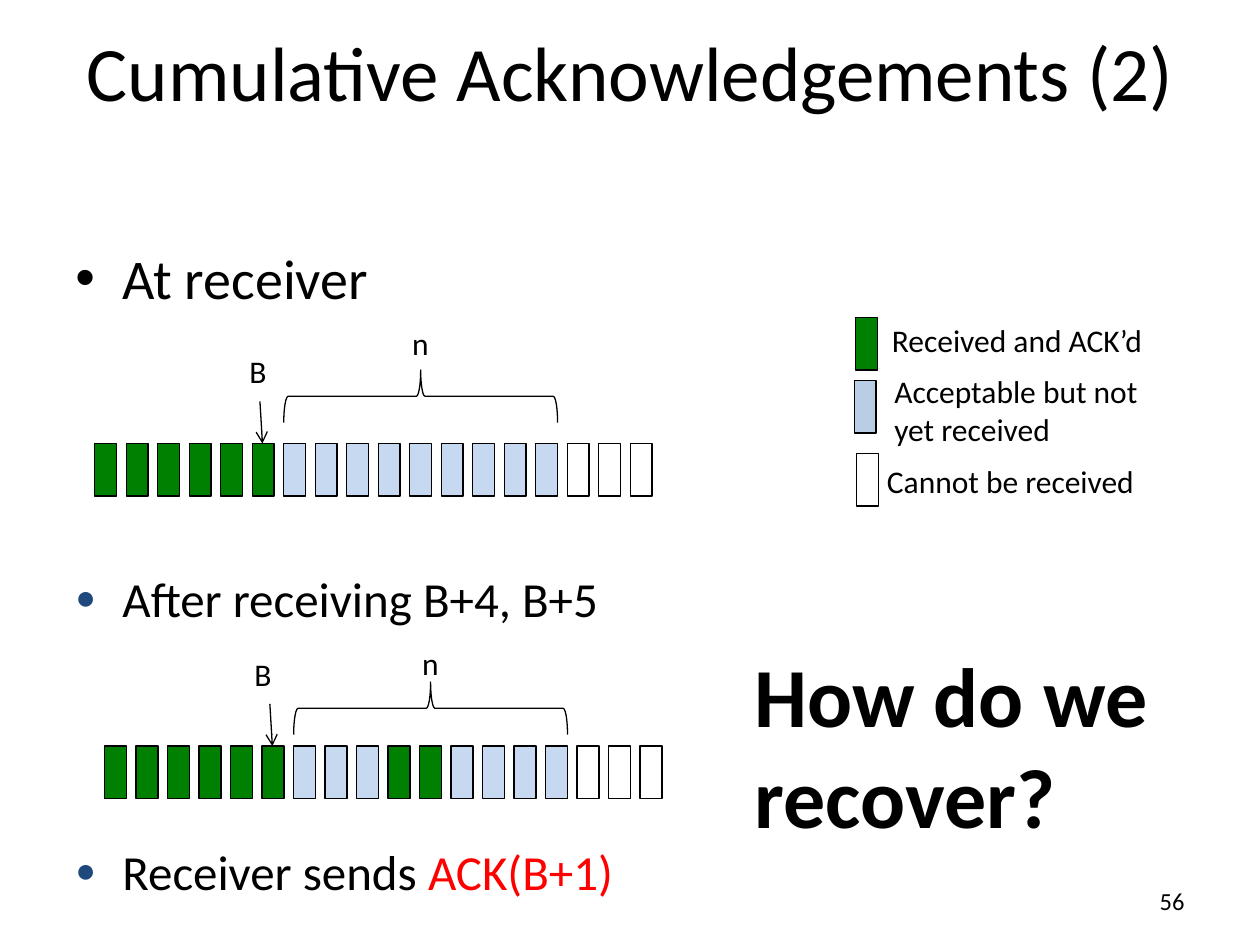
from dataclasses import dataclass

from lxml.etree import SubElement
from pptx import Presentation
from pptx.dml.color import RGBColor as Rgb
from pptx.enum.shapes import MSO_CONNECTOR as Connector, MSO_SHAPE as Shape
from pptx.enum.text import MSO_ANCHOR as Anchor, PP_ALIGN as Align
from pptx.oxml.ns import qn
from pptx.util import Cm, Pt


@dataclass(frozen=True)
class Theme:
    font: str = "Calibri"
    black: str = "000000"
    accent: str = "FF0000"
    bullet: str = "1F497D"
    received: str = "008000"
    acceptable: str = "C6D9F1"
    acceptable_key: str = "B9CDE5"
    blocked: str = "FFFFFF"
    title: int = 44
    heading: int = 32
    point: int = 28
    label: int = 18
    number: int = 14
    question: int = 48
    line: float = 0.75


@dataclass(frozen=True)
class Label:
    text: str
    left: float
    top: float
    width: float
    height: float = 1.02
    size: int = 18
    wrap: bool = False
    bold: bool = False
    align: Align = Align.LEFT
    anchor: Anchor = Anchor.TOP


@dataclass(frozen=True)
class Bullet:
    spans: tuple[tuple[str, str], ...]
    top: float
    size: int
    mark: str = "●"
    color: str = "1F497D"
    percent: int = 70


@dataclass(frozen=True)
class Strip:
    left: float
    top: float
    cells: str
    brace_top: float
    n_top: float
    b_left: float


@dataclass(frozen=True)
class Key:
    left: float
    top: float
    fill: str
    label: Label


THEME = Theme()
CELL_WIDTH, CELL_HEIGHT = Cm(0.44), Cm(1.06)
PITCH = Cm(2.54) // 4
WINDOW_START, WINDOW_SIZE = 6, 9
FILLS = {"R": THEME.received, "A": THEME.acceptable, "X": THEME.blocked}

LABELS = (
    Label("Cumulative Acknowledgements (2)", 1.07, -0.2, 23.29, 3.25, THEME.title,
          wrap=True, align=Align.CENTER, anchor=Anchor.MIDDLE),
    Label("56", 18.21, 17.65, 5.92, size=THEME.number, wrap=True,
          align=Align.RIGHT, anchor=Anchor.MIDDLE),
    Label("How do we recover?", 14.96, 12.85, 8.74, 4.37, THEME.question,
          wrap=True, bold=True),
)
BULLETS = (
    Bullet((("At receiver", THEME.black),), 4.78, THEME.heading, "•", THEME.black, 100),
    Bullet((("After receiving B+4, B+5", THEME.black),), 11.33, THEME.point),
    Bullet((("Receiver sends ", THEME.black), ("ACK(B+1)", THEME.accent)),
           16.84, THEME.point),
)
STRIPS = (
    Strip(1.91, 8.94, "RRRRRRAAAAAAAAAXXX", 7.46, 6.4, 4.78),
    Strip(2.11, 15.04, "RRRRRRAAARRAAAAXXX", 13.75, 12.85, 4.88),
)
KEYS = (
    Key(17.25, 6.4, THEME.received, Label("Received and ACK’d", 17.73, 6.35, 5.61)),
    Key(17.22, 7.67, THEME.acceptable_key,
        Label("Acceptable but not\nyet received", 17.78, 7.37, 5.46, 1.8)),
    Key(17.27, 9.14, THEME.blocked, Label("Cannot be received", 17.63, 9.19, 5.54)),
)


def format_span(span, size: int, color: str, bold: bool = False) -> None:
    span.font.name = THEME.font
    span.font.size = Pt(size)
    span.font.bold = bold
    span.font.color.rgb = Rgb.from_string(color)


def outline(shape) -> None:
    shape.line.color.rgb = Rgb.from_string(THEME.black)
    shape.line.width = Pt(THEME.line)


def draw_label(page, label: Label) -> None:
    box = page.shapes.add_textbox(
        Cm(label.left), Cm(label.top), Cm(label.width), Cm(label.height))
    frame = box.text_frame
    frame.text = label.text
    frame.word_wrap = label.wrap
    frame.vertical_anchor = label.anchor
    for para in frame.paragraphs:
        para.alignment = label.align
        for span in para.runs:
            format_span(span, label.size, THEME.black, label.bold)


def draw_bullet(page, bullet: Bullet) -> None:
    box = page.shapes.add_textbox(Cm(1.27), Cm(bullet.top), Cm(22.86), Cm(1.57))
    box.text_frame.word_wrap = True
    para = box.text_frame.paragraphs[0]
    for text, color in bullet.spans:
        span = para.add_run()
        span.text = text
        format_span(span, bullet.size, color)
    props = para._p.get_or_add_pPr()
    props.set("marL", str(Cm(0.95)))
    props.set("indent", str(Cm(-0.95)))
    before = SubElement(props, qn("a:spcBef"))
    SubElement(before, qn("a:spcPct"), val="20000")
    tint = SubElement(props, qn("a:buClr"))
    SubElement(tint, qn("a:srgbClr"), val=bullet.color)
    SubElement(props, qn("a:buSzPct"), val=str(bullet.percent * 1000))
    SubElement(props, qn("a:buFont"), typeface="Arial")
    SubElement(props, qn("a:buChar"), char=bullet.mark)


def draw_cell(page, left: int, top: int, fill: str) -> None:
    cell = page.shapes.add_shape(Shape.RECTANGLE, left, top, CELL_WIDTH, CELL_HEIGHT)
    cell.shadow.inherit = False
    cell.fill.solid()
    cell.fill.fore_color.rgb = Rgb.from_string(fill)
    outline(cell)


def draw_brace(page, left: int, top: int, width: int, height: int) -> None:
    brace = page.shapes.add_shape(
        Shape.LEFT_BRACE, left + (width - height) // 2, top - (width - height) // 2,
        height, width)
    brace.rotation = 90
    brace.shadow.inherit = False
    brace.fill.background()
    outline(brace)


def draw_arrow(page, start: tuple[int, int], end: tuple[int, int]) -> None:
    arrow = page.shapes.add_connector(Connector.STRAIGHT, *start, *end)
    outline(arrow)
    SubElement(arrow.line._get_or_add_ln(), qn("a:tailEnd"), type="arrow")
    SubElement(arrow._element.spPr, qn("a:effectLst"))


def draw_strip(page, strip: Strip) -> None:
    left, top = Cm(strip.left), Cm(strip.top)
    for index, state in enumerate(strip.cells):
        draw_cell(page, left + index * PITCH, top, FILLS[state])
    draw_brace(page, left + WINDOW_START * PITCH, Cm(strip.brace_top),
               (WINDOW_SIZE - 1) * PITCH + CELL_WIDTH, CELL_HEIGHT)
    draw_label(page, Label("n", strip.left + 6.15, strip.n_top, 0.84))
    draw_label(page, Label("B", strip.b_left, strip.top - 1.96, 0.86))
    draw_arrow(page, (left + Cm(3.33), top - Cm(0.85)), (left + Cm(3.38), top))


def draw_key(page, key: Key) -> None:
    draw_cell(page, Cm(key.left), Cm(key.top), key.fill)
    draw_label(page, key.label)


def main() -> None:
    deck = Presentation()
    deck.slide_width, deck.slide_height = Cm(25.4), Cm(19.05)
    page = deck.slides.add_slide(deck.slide_layouts[6])
    for draw, items in ((draw_label, LABELS), (draw_bullet, BULLETS),
                        (draw_strip, STRIPS), (draw_key, KEYS)):
        for item in items:
            draw(page, item)
    deck.save("out.pptx")


if __name__ == "__main__":
    main()
